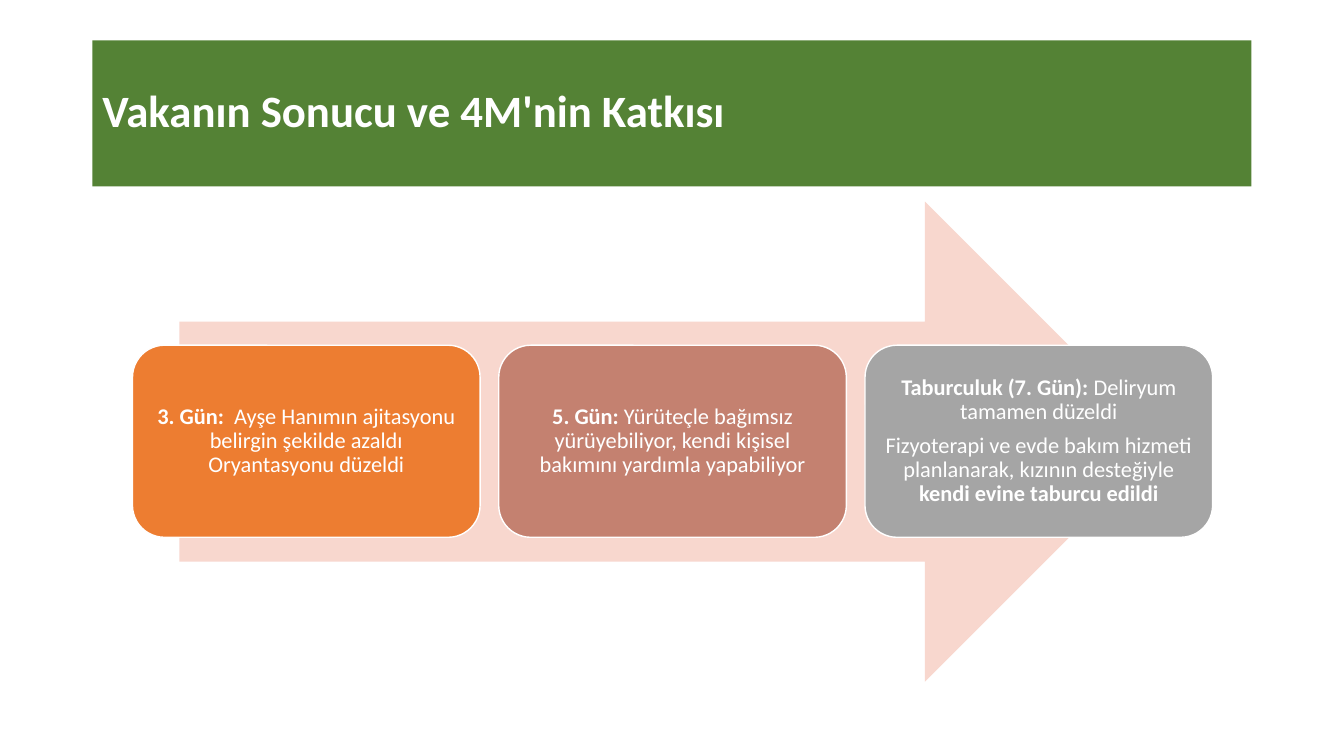
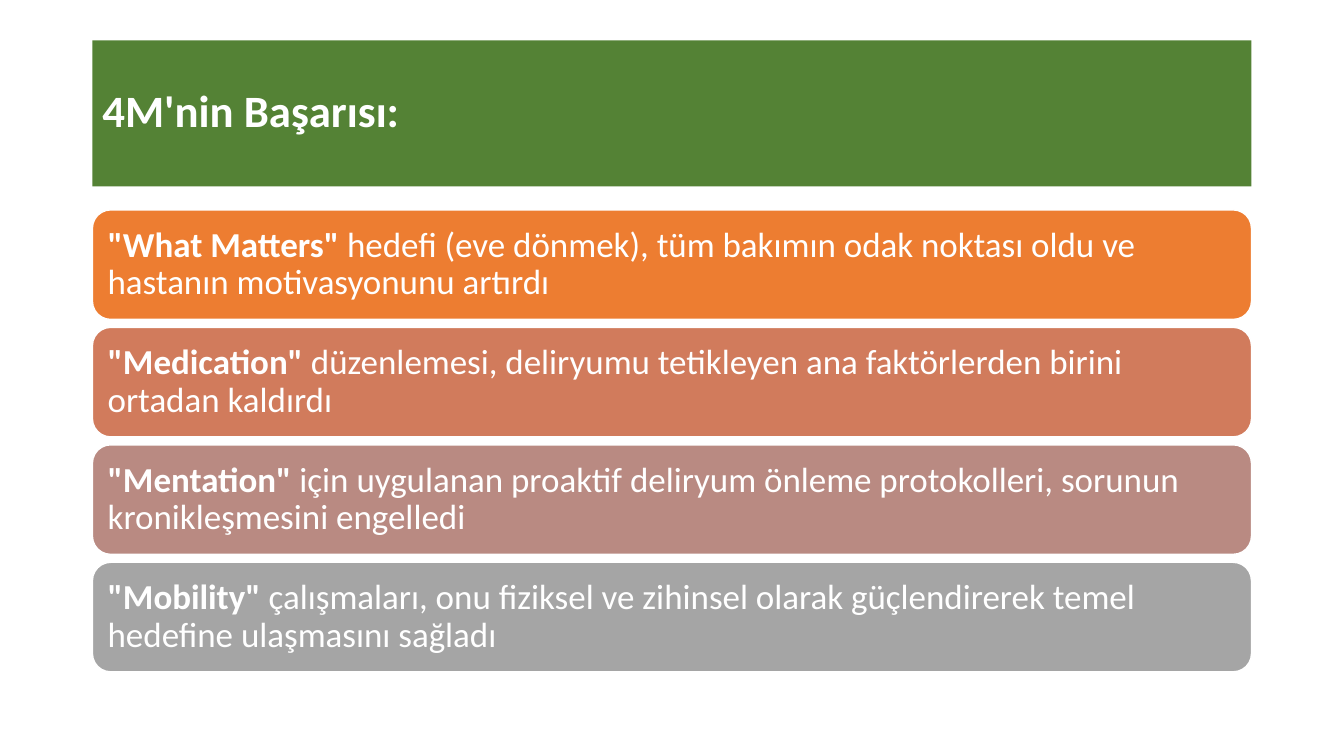
from pptx import Presentation
from pptx.dml.color import RGBColor
from pptx.enum.shapes import MSO_SHAPE
from pptx.enum.text import MSO_ANCHOR, PP_ALIGN
from pptx.util import Cm, Pt

# Shared colours, font and frame
WHITE = RGBColor(0xFF, 0xFF, 0xFF)
GREEN = RGBColor(0x54, 0x82, 0x35)
PEACH = RGBColor(0xF8, 0xD7, 0xCE)
ORANGE = RGBColor(0xED, 0x7D, 0x31)
CORAL = RGBColor(0xD1, 0x7B, 0x5C)
ROSE = RGBColor(0xC4, 0x81, 0x70)
MAUVE = RGBColor(0xB9, 0x8A, 0x82)
GREY = RGBColor(0xA5, 0xA5, 0xA5)
FONT = "Calibri"
LEFT, WIDTH = 2.33, 29.21

deck = Presentation()
deck.slide_width, deck.slide_height = Cm(33.87), Cm(19.05)


def add_box(slide, kind, frame, fill, paras=(), size=16, inset=0.25,
            align=PP_ALIGN.LEFT, after=0, edge=False):
    """Add a filled shape; each paragraph is a list of (text, bold) runs."""
    box = slide.shapes.add_shape(kind, *[Cm(n) for n in frame])
    box.shadow.inherit = False
    box.fill.solid()
    box.fill.fore_color.rgb = fill
    if edge:
        box.line.color.rgb = WHITE
        box.line.width = Pt(1)
    else:
        box.line.fill.background()
    text = box.text_frame
    text.word_wrap = True
    text.vertical_anchor = MSO_ANCHOR.MIDDLE
    text.margin_left = text.margin_right = Cm(inset)
    text.margin_top = text.margin_bottom = Cm(min(inset, 0.25))
    for i, runs in enumerate(paras):
        para = text.add_paragraph() if i else text.paragraphs[0]
        para.alignment = align
        para.line_spacing = 0.9
        para.space_after = Pt(after)
        para.font.name, para.font.size = FONT, Pt(size)
        para.font.color.rgb = WHITE
        for words, bold in runs:
            run = para.add_run()
            run.text = words
            run.font.bold = bold


def add_page(title):
    """Add a blank slide with the green title band."""
    slide = deck.slides.add_slide(deck.slide_layouts[6])
    add_box(slide, MSO_SHAPE.RECTANGLE, (LEFT, 1.02, WIDTH, 3.68), GREEN,
            [[(title, True)]], size=32)
    return slide


# Slide 1: three steps on an arrow
page = add_page("Vakanın Sonucu ve 4M'nin Katkısı")
add_box(page, MSO_SHAPE.RIGHT_ARROW, (4.52, 5.08, 24.84, 12.1), PEACH)
steps = [
    (ORANGE, [[("3. Gün:", True),
               ("  Ayşe Hanımın ajitasyonu belirgin şekilde azaldı "
                "Oryantasyonu düzeldi", False)]]),
    (ROSE, [[("5. Gün:", True),
             (" Yürüteçle bağımsız yürüyebiliyor, kendi kişisel "
              "bakımını yardımla yapabiliyor", False)]]),
    (GREY, [[("Taburculuk (7. Gün): ", True),
             ("Deliryum tamamen düzeldi", False)],
            [("Fizyoterapi ve evde bakım hizmeti planlanarak, kızının "
              "desteğiyle ", False),
             ("kendi evine taburcu edildi", True)]]),
]
for i, (fill, paras) in enumerate(steps):
    add_box(page, MSO_SHAPE.ROUNDED_RECTANGLE,
            (3.34 + i * 9.23, 8.7, 8.76, 4.84), fill, paras,
            inset=0.17, align=PP_ALIGN.CENTER, after=6.5, edge=True)

# Slide 2: four stacked bars
page = add_page("4M'nin Başarısı:")
bars = [
    (ORANGE, '"What Matters"',
     " hedefi (eve dönmek), tüm bakımın odak noktası oldu ve "
     "hastanın motivasyonunu artırdı"),
    (CORAL, '"Medication"',
     " düzenlemesi, deliryumu tetikleyen ana faktörlerden birini "
     "ortadan kaldırdı"),
    (MAUVE, '"Mentation"',
     " için uygulanan proaktif deliryum önleme protokolleri, sorunun "
     "kronikleşmesini engelledi"),
    (GREY, '"Mobility"',
     " çalışmaları, onu fiziksel ve zihinsel olarak güçlendirerek temel "
     "hedefine ulaşmasını sağladı"),
]
for i, (fill, name, words) in enumerate(bars):
    add_box(page, MSO_SHAPE.ROUNDED_RECTANGLE,
            (LEFT, 5.29 + i * 2.96, WIDTH, 2.76), fill,
            [[(name, True), (words, False)]], size=25, after=10, edge=True)

deck.save("out.pptx")
